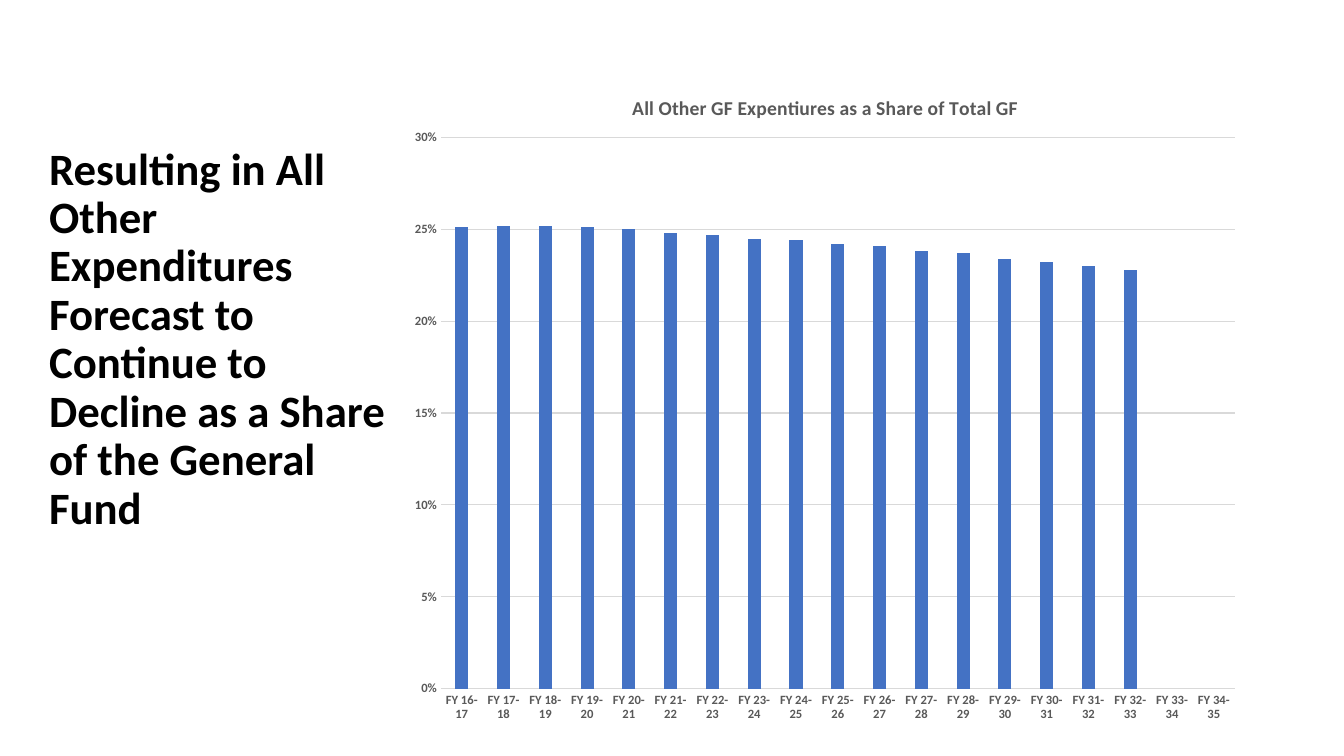
import pptx
import pptx.chart.data
import pptx.dml.color
import pptx.enum.chart
import pptx.enum.text
import pptx.oxml
import pptx.oxml.ns
import pptx.util

Pt = pptx.util.Pt
BLACK = pptx.dml.color.RGBColor(0x00, 0x00, 0x00)
GRAY = pptx.dml.color.RGBColor(0x59, 0x59, 0x59)
GRID = pptx.dml.color.RGBColor(0xD9, 0xD9, 0xD9)
BLUE = pptx.dml.color.RGBColor(0x44, 0x72, 0xC4)
FONT = "Calibri"

HEADLINE = ("Resulting in All Other Expenditures Forecast to Continue to "
            "Decline as a Share of the General Fund")
CHART_TITLE = "All Other GF Expentiures as a Share of Total GF"
YEARS = [f"FY {year}-{year + 1}" for year in range(16, 35)]
SHARES = [0.251, 0.252, 0.252, 0.251, 0.25, 0.248, 0.247, 0.245, 0.244,
          0.242, 0.241, 0.238, 0.237, 0.234, 0.232, 0.23, 0.228]


def set_attributes(target, values):
    for name, value in values.items():
        setattr(target, name, value)


def format_font(font, size, color):
    set_attributes(font, {"name": FONT, "size": Pt(size), "bold": True})
    font.color.rgb = color


def format_line(line):
    line.color.rgb = GRID
    line.width = Pt(0.75)


def make_layout(**fractions):
    """Return a manual chart layout; x, y, w and h are shares of the chart."""
    modes = {"xMode": "edge", "yMode": "edge"}
    if "w" in fractions:
        modes = {"layoutTarget": "inner", **modes}
    entries = "".join(f'<c:{tag} val="{value}"/>'
                      for tag, value in {**modes, **fractions}.items())
    return pptx.oxml.parse_xml(
        f'<c:layout {pptx.oxml.ns.nsdecls("c")}>'
        f'<c:manualLayout>{entries}</c:manualLayout></c:layout>')


def drop_layout(parent):
    for layout in parent.findall(pptx.oxml.ns.qn("c:layout")):
        parent.remove(layout)


def add_headline(slide):
    headline = slide.shapes.add_textbox(Pt(28), Pt(101), Pt(256), Pt(300))
    frame = headline.text_frame
    set_attributes(frame, {"word_wrap": True,
                           "vertical_anchor": pptx.enum.text.MSO_ANCHOR.TOP})
    paragraph = frame.paragraphs[0]
    paragraph.text = HEADLINE
    paragraph.line_spacing = 0.9
    format_font(paragraph.runs[0].font, 32, BLACK)


def add_share_chart(slide):
    data = pptx.chart.data.CategoryChartData(number_format="0%")
    data.categories = YEARS
    data.add_series("Series 1", SHARES + [None] * (len(YEARS) - len(SHARES)))
    chart = slide.shapes.add_chart(
        pptx.enum.chart.XL_CHART_TYPE.COLUMN_CLUSTERED,
        Pt(284.4), Pt(45.4), Pt(609.8), Pt(480.2), data).chart
    chart.has_legend = False
    set_attributes(chart.font, {"name": FONT, "size": Pt(10)})

    # Title
    chart.has_title = True
    title = chart.chart_title
    title.include_in_layout = False
    title.text_frame.text = CHART_TITLE
    format_font(title.text_frame.paragraphs[0].runs[0].font, 14, GRAY)
    title_element = title.text_frame.paragraphs[0]._p.getparent().getparent().getparent()
    drop_layout(title_element)
    title_element.find(pptx.oxml.ns.qn("c:tx")).addnext(make_layout(x=0.27, y=0.04))

    # Columns
    plot = chart.plots[0]
    set_attributes(plot, {"gap_width": 219, "overlap": -27,
                          "vary_by_categories": False})
    columns = plot.series[0].format.fill
    columns.solid()
    columns.fore_color.rgb = BLUE

    # Axes
    no_tick = pptx.enum.chart.XL_TICK_MARK.NONE
    for axis in (chart.category_axis, chart.value_axis):
        set_attributes(axis, {"major_tick_mark": no_tick,
                              "minor_tick_mark": no_tick})
        format_font(axis.tick_labels.font, 9, GRAY)
    format_line(chart.category_axis.format.line)
    shares = chart.value_axis
    set_attributes(shares, {"minimum_scale": 0, "maximum_scale": 0.3,
                            "major_unit": 0.05, "has_major_gridlines": True})
    set_attributes(shares.tick_labels, {"number_format": "0%",
                                        "number_format_is_linked": False})
    shares.format.line.fill.background()
    format_line(shares.major_gridlines.format.line)

    # Plot area
    plot_area = next(chart.element.iter(pptx.oxml.ns.qn("c:plotArea")))
    drop_layout(plot_area)
    plot_area.insert(0, make_layout(x=0.05, y=0.11, w=0.93, h=0.82))


def main():
    presentation = pptx.Presentation()
    set_attributes(presentation, {"slide_width": Pt(960),
                                  "slide_height": Pt(540)})
    slide = presentation.slides.add_slide(presentation.slide_layouts[6])
    add_headline(slide)
    add_share_chart(slide)
    presentation.save("out.pptx")


if __name__ == "__main__":
    main()
